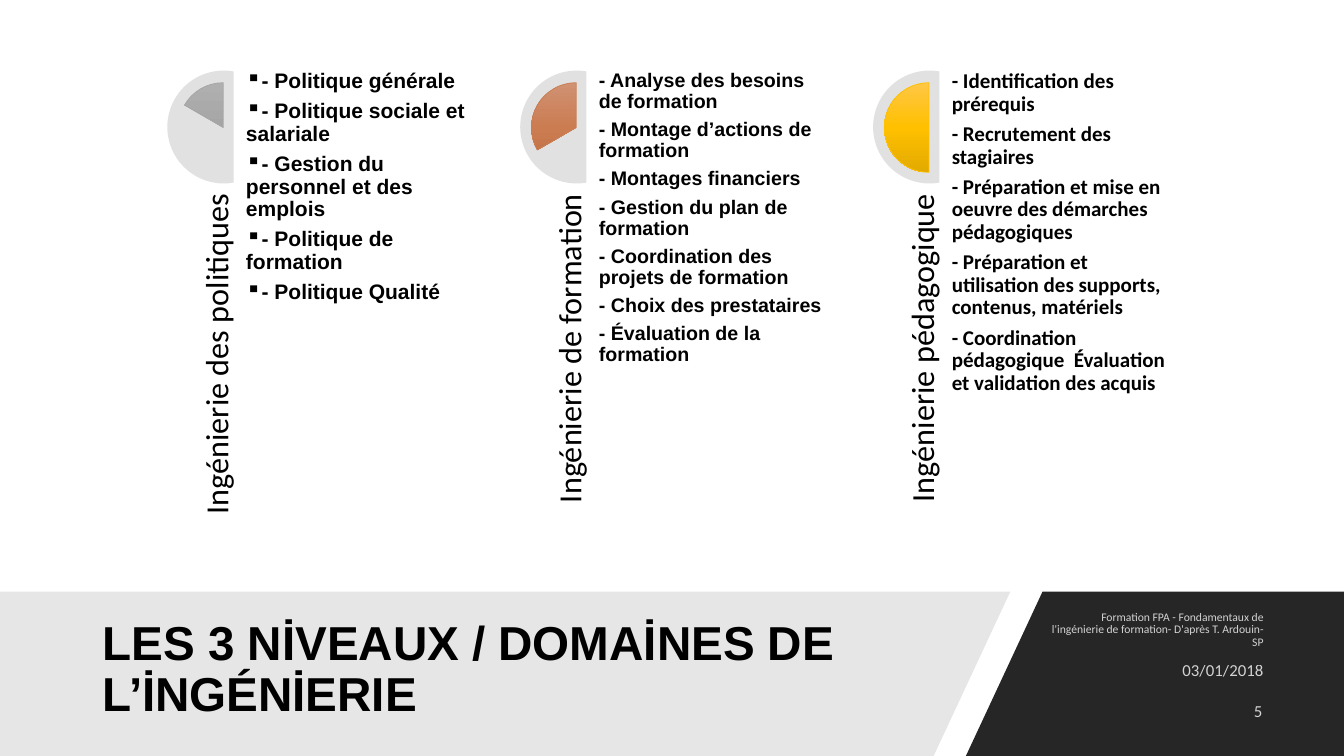
from copy import deepcopy

from lxml import etree
from pptx import Presentation
from pptx import util as u
from pptx.dml.color import RGBColor
from pptx.enum import shapes, text
from pptx.oxml.ns import qn

RIGHT = text.PP_ALIGN.RIGHT
MIDDLE = text.MSO_ANCHOR.MIDDLE


def rgb(color):
    return RGBColor.from_string(color)


def add_text(box, lines, size, font="Calibri", color="000000", bold=False, align=None,
             anchor=text.MSO_ANCHOR.TOP, inset=None, spacing=0.9, after=0):
    sp = slide.shapes.add_textbox(*[u.Inches(v) for v in box])
    tf = sp.text_frame
    tf.word_wrap = True
    tf.vertical_anchor = anchor
    if inset is not None:
        tf.margin_left = tf.margin_right = tf.margin_top = tf.margin_bottom = u.Inches(inset)
    for i, line in enumerate(lines):
        p = tf.add_paragraph() if i else tf.paragraphs[0]
        p.alignment = align
        p.line_spacing = spacing
        p.space_after = u.Pt(after)
        r = p.add_run()
        r.text = line
        r.font.size = u.Pt(size)
        r.font.name = font
        r.font.bold = bold
        r.font.color.rgb = rgb(color)
    return sp


prs = Presentation()
prs.slide_width, prs.slide_height = u.Inches(13.33), u.Inches(7.5)
slide = prs.slides.add_slide(prs.slide_layouts[6])

# Bottom bands
bands = [
    ("262626", [(10.34, 5.87), (13.33, 5.87), (13.33, 7.5), (9.58, 7.5)]),
    ("E7E6E6", [(0, 5.87), (10.02, 5.87), (9.26, 7.5), (0, 7.5)]),
]
for color, points in bands:
    points = [(u.Inches(x), u.Inches(y)) for x, y in points]
    fb = slide.shapes.build_freeform(*points[0])
    fb.add_line_segments(points[1:], close=True)
    sp = fb.convert_to_shape()
    sp.shadow.inherit = False
    sp.fill.solid()
    sp.fill.fore_color.rgb = rgb(color)
    sp.line.fill.background()

# Title
add_text((0.92, 6.05, 8.44, 1.2), ["LES 3 NİVEAUX / DOMAİNES DE L’İNGÉNİERIE"],
         34, "Arial", bold=True, anchor=MIDDLE)

# Three levels: heading, pie start, gradient, font, size, bullet, items
levels = [
    ("Ingénierie des politiques", 126, ("AFAFAF", "A5A5A5", "939393"), "Arial", 15, "▪",
     ["- Politique générale", "- Politique sociale et salariale",
      "- Gestion du personnel et des emplois", "- Politique de formation",
      "- Politique Qualité"]),
    ("Ingénierie de formation", 90, ("D09273", "CB7C51", "BC6B40"), "Arial", 14, None,
     ["- Analyse des besoins de formation", "- Montage d’actions de formation",
      "- Montages financiers", "- Gestion du plan de formation",
      "- Coordination des projets de formation", "- Choix des prestataires",
      "- Évaluation de la formation"]),
    ("Ingénierie pédagogique", 54, ("FFC746", "FFC000", "E3AA00"), "Calibri", 15, None,
     ["- Identification des prérequis", "- Recrutement des stagiaires",
      "- Préparation et mise en oeuvre des démarches pédagogiques",
      "- Préparation et utilisation des supports, contenus, matériels",
      "- Coordination pédagogique  Évaluation et validation des acquis"]),
]
for i, (heading, start, colors, font, size, bullet, items) in enumerate(levels):
    x = 1.66 + 3.5 * i

    # Half disc with its pie
    chord = slide.shapes.add_shape(shapes.MSO_SHAPE.CHORD, u.Inches(x), u.Inches(0.7),
                                   u.Inches(1.12), u.Inches(1.12))
    chord.adjustments[0], chord.adjustments[1] = 48, 168
    chord.shadow.inherit = False
    chord.fill.solid()
    chord.fill.fore_color.rgb = rgb("E1E1E1")
    chord.line.fill.background()

    pie = slide.shapes.add_shape(shapes.MSO_SHAPE.PIE, u.Inches(x + 0.11), u.Inches(0.82),
                                 u.Inches(0.89), u.Inches(0.89))
    pie.adjustments[0], pie.adjustments[1] = start, 162
    pie.shadow.inherit = False
    pie.fill.gradient()
    pie.fill.gradient_angle = 270
    stops = pie._element.spPr.find(qn("a:gradFill")).find(qn("a:gsLst"))
    stops.insert(1, deepcopy(stops[0]))
    for stop, color, position in zip(pie.fill.gradient_stops, colors, (0, 0.5, 1)):
        stop.color.rgb = rgb(color)
        stop.position = position
    pie.line.color.rgb = rgb(colors[1])
    pie.line.width = u.Pt(0.5)

    # Vertical heading and list
    sp = add_text((x - 1.28, 3.21, 3.24, 0.67), [heading], 23, align=RIGHT,
                  anchor=text.MSO_ANCHOR.BOTTOM, inset=0)
    sp.rotation = 270
    sp = add_text((x + 0.78, 0.7, 2.23, 4.46), items, size, font, bold=True,
                  inset=0, after=0.35 * size)
    if bullet:
        for p in sp.text_frame.paragraphs:
            pPr = p._p.get_or_add_pPr()
            pPr.set("marL", "0")
            pPr.set("indent", "0")
            etree.SubElement(pPr, qn("a:buChar")).set("char", bullet)

# Footer, date and slide number
footers = [
    ((10.3, 6.05, 2.33, 0.4), 8.3, 0.9,
     "Formation FPA - Fondamentaux de l'ingénierie de formation- D'après T. Ardouin-SP"),
    ((10.3, 6.45, 2.33, 0.4), 12, 1.0, "03/01/2018"),
    ((11.15, 6.85, 1.47, 0.4), 12, 1.0, "5"),
]
for box, size, spacing, line in footers:
    sp = add_text(box, [line], size, color="FFFFFF", align=RIGHT, anchor=MIDDLE,
                  spacing=spacing, after=6)
    for color in sp._element.iter(qn("a:srgbClr")):
        etree.SubElement(color, qn("a:alpha")).set("val", "80000")

prs.save("out.pptx")
